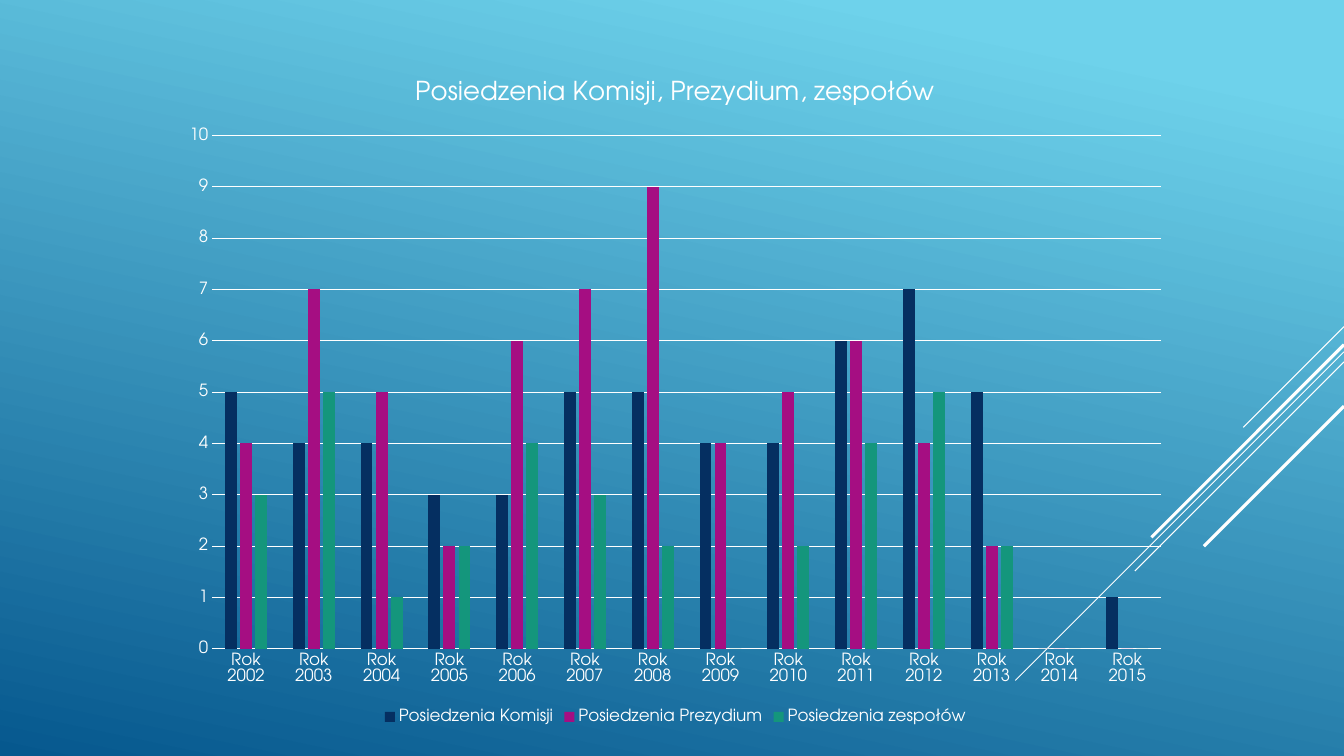
from lxml import etree
from pptx import Presentation
from pptx.chart.data import CategoryChartData
from pptx.dml.color import RGBColor
from pptx.enum.chart import XL_CHART_TYPE, XL_LEGEND_POSITION, XL_TICK_MARK
from pptx.enum.shapes import MSO_CONNECTOR
from pptx.oxml.ns import qn
from pptx.util import Inches, Pt

CLUSTERED = XL_CHART_TYPE.COLUMN_CLUSTERED
LEGEND_BOTTOM = XL_LEGEND_POSITION.BOTTOM
NO_TICK = XL_TICK_MARK.NONE
STRAIGHT = MSO_CONNECTOR.STRAIGHT

# The slide is a grid of square cells
COLUMNS, ROWS = 160, 90


def rgb(hex_code):
    return RGBColor.from_string(hex_code)


class MeetingsSlide:
    FONT = "TeX Gyre Adventor"
    INK = "FFFFFF"
    BODY, LABEL, TITLE = 10, 12, 18.6
    THIN, THICK = 0.75, 2.25

    def __init__(self, deck):
        self.slide = deck.slides.add_slide(deck.slide_layouts[6])
        self.cell_width = deck.slide_width / COLUMNS
        self.cell_height = deck.slide_height / ROWS

    def x(self, columns):
        return round(columns * self.cell_width)

    def y(self, rows):
        return round(rows * self.cell_height)

    def style_font(self, font, size):
        font.name, font.size, font.bold = self.FONT, Pt(size), False
        font.color.rgb = rgb(self.INK)

    def style_line(self, line, width):
        line.color.rgb = rgb(self.INK)
        line.width = Pt(width)

    def background(self, stops, angle):
        fill = self.slide.background.fill
        fill.gradient()
        fill.gradient_angle = angle
        for stop, (position, color) in zip(fill.gradient_stops, stops):
            stop.position = position
            stop.color.rgb = rgb(color)

    def diagonal(self, start_row, reach, width):
        """A 45 degree line running down and left from the right edge."""
        stripe = self.slide.shapes.add_connector(
            STRAIGHT, self.x(COLUMNS), self.y(start_row),
            self.x(COLUMNS - reach), self.y(start_row + reach))
        self.style_line(stripe.line, width)
        etree.SubElement(stripe._element.spPr, qn("a:effectLst"))

    def column_chart(self, title, categories, series, left, top, width, height):
        data = CategoryChartData(number_format="General")
        data.categories = categories
        for name, _, values in series:
            data.add_series(name, values)
        chart = self.slide.shapes.add_chart(
            CLUSTERED, self.x(left), self.y(top),
            self.x(width), self.y(height), data).chart
        self.style_font(chart.font, self.BODY)

        # Title and legend
        heading = chart.chart_title.text_frame
        heading.text = title
        self.style_font(heading.paragraphs[0].runs[0].font, self.TITLE)
        chart.chart_title.include_in_layout = False
        chart.has_legend = True
        chart.legend.position = LEGEND_BOTTOM
        chart.legend.include_in_layout = False
        self.style_font(chart.legend.font, self.LABEL)

        # Axes
        years, counts = chart.category_axis, chart.value_axis
        for axis in (years, counts):
            axis.major_tick_mark = axis.minor_tick_mark = NO_TICK
            self.style_font(axis.tick_labels.font, self.LABEL)
        self.style_line(years.format.line, self.THIN)
        counts.format.line.fill.background()
        counts.minimum_scale, counts.maximum_scale, counts.major_unit = 0, 10, 1
        self.style_line(counts.major_gridlines.format.line, self.THIN)

        # Columns
        plot = chart.plots[0]
        plot.vary_by_categories = False
        plot.gap_width, plot.overlap = 219, -27
        for columns, (_, color, _) in zip(plot.series, series):
            columns.format.fill.solid()
            columns.format.fill.fore_color.rgb = rgb(color)


def main():
    deck = Presentation()
    deck.slide_width, deck.slide_height = Inches(13.33), Inches(7.5)
    page = MeetingsSlide(deck)
    page.background([(0.1, "6ED2EB"), (1, "06588E")], angle=258)

    # Diagonal stripes at the right edge
    for start_row, reach, width in [
        (38.88, 12, page.THIN),
        (41.88, 39.12, page.THIN),
        (43.08, 24.9, page.THIN),
        (41.04, 22.92, page.THICK),
        (48.36, 16.68, page.THICK),
    ]:
        page.diagonal(start_row, reach, width)

    # Meetings per year
    page.column_chart(
        "Posiedzenia Komisji, Prezydium, zespołów",
        [f"Rok {year}" for year in range(2002, 2016)],
        [
            ("Posiedzenia Komisji", "052F61",
             [5, 4, 4, 3, 3, 5, 5, 4, 4, 6, 7, 5, 0, 1]),
            ("Posiedzenia Prezydium", "A50E82",
             [4, 7, 5, 2, 6, 7, 9, 4, 5, 6, 4, 2, 0, 0]),
            ("Posiedzenia zespołów", "14967C",
             [3, 5, 1, 2, 4, 3, 2, 0, 2, 4, 5, 2, 0, 0]),
        ],
        left=20.16, top=6.6, width=120.48, height=80.16)

    deck.save("out.pptx")


if __name__ == "__main__":
    main()
